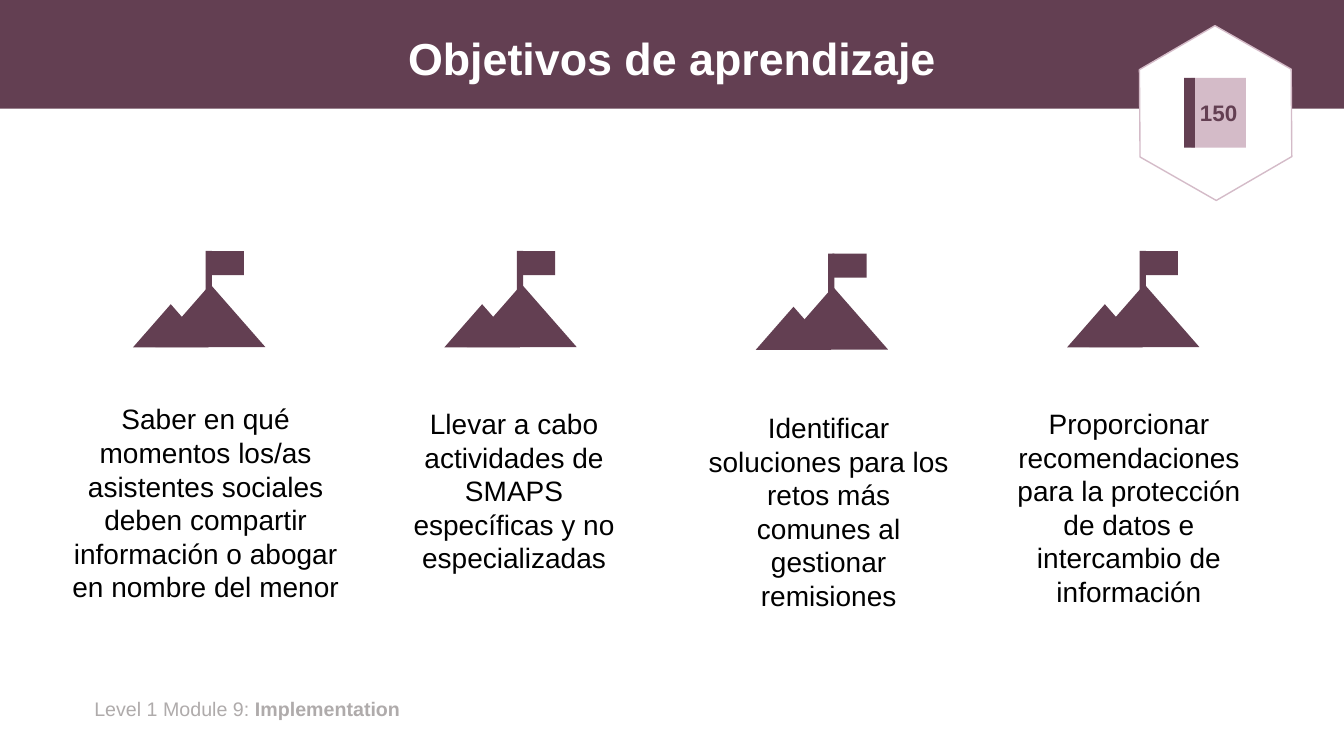
from pptx import Presentation
from pptx.dml.color import RGBColor
from pptx.enum.shapes import MSO_SHAPE
from pptx.enum.text import MSO_ANCHOR, MSO_AUTO_SIZE, PP_ALIGN
from pptx.util import Pt

RECT, PEAK, HEX = MSO_SHAPE.RECTANGLE, MSO_SHAPE.ISOSCELES_TRIANGLE, MSO_SHAPE.HEXAGON
MIDDLE = MSO_ANCHOR.MIDDLE
FIXED, GROW = MSO_AUTO_SIZE.NONE, MSO_AUTO_SIZE.SHAPE_TO_FIT_TEXT
LEFT, CENTER = PP_ALIGN.LEFT, PP_ALIGN.CENTER
COLORS = {"plum": "633F52", "pink": "D4BBC8", "white": "FFFFFF",
          "black": "000000", "gray": "AFABAB"}
ICON = [(RECT, 51.8, 0, 4.5, 28.8), (RECT, 54.7, 0, 24.5, 17.2),
        (PEAK, 16, 23.8, 78.5, 44.8), (PEAK, 0, 38, 54, 30.8)]
ICON_LEFT, ICON_TOP, PITCH = 95, 179.3, 222.4
GOALS = [
    ("Saber en qué momentos los/as asistentes sociales deben compartir "
     "información o abogar en nombre del menor", (41.8, 283.5, 210.2, 152.6), 0),
    ("Llevar a cabo actividades de SMAPS específicas y no especializadas",
     (274.3, 286.8, 185.8, 128.2), 0),
    ("Identificar soluciones para los retos más comunes al gestionar remisiones",
     (499, 289.6, 185.8, 152.6), 1.8),
    ("Proporcionar recomendaciones para la protección de datos e "
     "intercambio de información", (713.5, 286.8, 185.8, 152.6), 0),
]


class Deck:
    """Holds the font, the colours and the current slide."""

    def __init__(self, font, colors):
        self.font = font
        self.colors = {name: RGBColor.from_string(code) for name, code in colors.items()}
        self.file = Presentation()
        self.file.slide_width, self.file.slide_height = Pt(960), Pt(540)
        self.slide = self.file.slides.add_slide(self.file.slide_layouts[5])

    def style(self, par, size, color, bold=None, align=CENTER):
        par.alignment = align
        font = par.font
        font.name, font.size, font.bold = self.font, Pt(size), bold
        font.color.rgb = self.colors[color]

    def title(self, text, box):
        shape = self.slide.shapes.title
        shape.left, shape.top, shape.width, shape.height = map(Pt, box)
        frame = shape.text_frame
        frame.text = text
        frame.auto_size, frame.vertical_anchor = FIXED, MIDDLE
        self.style(frame.paragraphs[0], 32, "white", True)
        frame.paragraphs[0].line_spacing = 0.9

    def band(self, box):
        shape = self.shape(self.slide, RECT, box, "plum")
        self.slide.shapes.title.element.addprevious(shape.element)

    def group(self):
        return self.slide.shapes.add_group_shape()

    def shape(self, host, kind, box, fill, line=None):
        shape = host.shapes.add_shape(kind, *map(Pt, box))
        shape.shadow.inherit = False
        shape.fill.solid()
        shape.fill.fore_color.rgb = self.colors[fill]
        if line:
            shape.line.color.rgb = self.colors[line]
            shape.line.width = Pt(1)
        else:
            shape.line.fill.background()
        return shape

    def text(self, parts, box, size, color, align=CENTER):
        frame = self.slide.shapes.add_textbox(*map(Pt, box)).text_frame
        frame.word_wrap, frame.auto_size = True, GROW
        par = frame.paragraphs[0]
        self.style(par, size, color, align=align)
        for part, bold in parts:
            run = par.add_run()
            run.text = part
            if bold:
                run.font.bold = True

    def icon(self, left, top):
        group = self.group()
        for kind, x, y, width, height in ICON:
            self.shape(group, kind, (left + x, top + y, width, height), "plum")

    def badge(self, page):
        group = self.group()
        frame = self.shape(group, HEX, (805.7, 26.8, 125.3, 108), "white", "pink")
        frame.rotation = 29.7
        frame.adjustments[0] = 0.29
        cover = self.shape(group, RECT, (851, 55.6, 39, 49.8), "pink").text_frame
        cover.text = page
        cover.word_wrap, cover.vertical_anchor = False, MIDDLE
        self.style(cover.paragraphs[0], 16, "plum", True)
        self.shape(group, RECT, (845.8, 55.6, 7.8, 49.8), "plum")


def main():
    deck = Deck("Arial", COLORS)
    deck.title("Objetivos de aprendizaje", (66.2, 9.4, 828, 68.4))
    deck.band((0, 0, 960, 77.6))
    deck.text([("Level 1 Module 9: ", False), ("Implementation", True)],
              (60.3, 494.6, 327.6, 24.3), 14, "gray", LEFT)
    for index, (goal, box, drop) in enumerate(GOALS):
        deck.icon(ICON_LEFT + index * PITCH, ICON_TOP + drop)
        deck.text([(goal, False)], box, 20, "black")
    deck.badge("150")
    deck.file.save("out.pptx")


if __name__ == "__main__":
    main()
